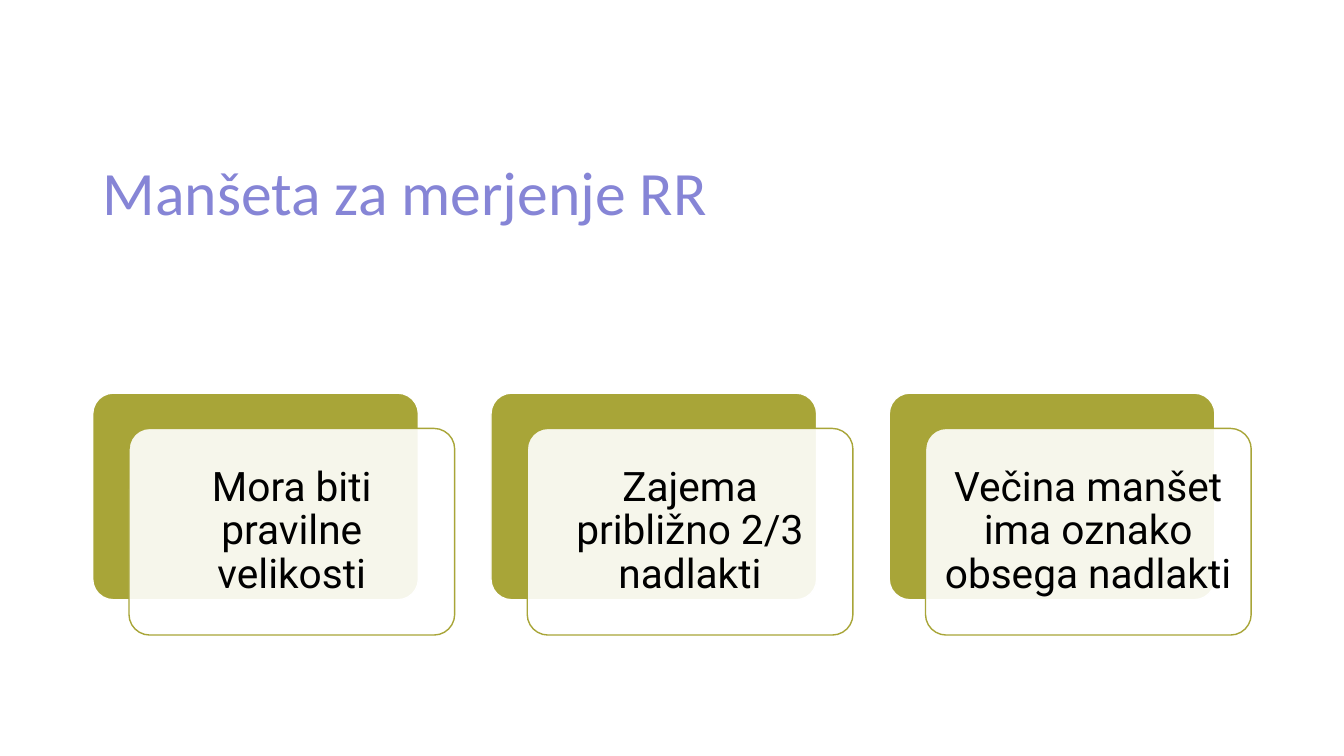
from lxml import etree
from pptx import Presentation
from pptx.dml.color import RGBColor
from pptx.enum.shapes import MSO_SHAPE as Shape
from pptx.enum.text import MSO_ANCHOR as Anchor, PP_ALIGN as Align
from pptx.oxml.ns import qn
from pptx.util import Inches, Pt

TITLE = "Manšeta za merjenje RR"
CARDS = [
    "Mora biti pravilne velikosti",
    "Zajema približno 2/3 nadlakti",
    "Večina manšet ima oznako obsega nadlakti",
]
OLIVE, WHITE, BLACK, LILAC = "A8A538", "FFFFFF", "000000", "8685D6"
LEFT, TOP, WIDTH, HEIGHT = 0.92, 3.9, 3.23, 2.05
PITCH, SHIFT, INSET = 3.95, (0.36, 0.35), 0.12
TITLE_FONT = {"name": "Calibri", "size": Pt(44)}
CARD_FONT = {"name": "Roboto", "size": Pt(29)}


def paint(color_format, value):
    color_format.rgb = RGBColor.from_string(value)


def write(shape, text, font, color, align):
    frame = shape.text_frame
    frame.word_wrap = True
    frame.vertical_anchor = Anchor.MIDDLE
    para = frame.paragraphs[0]
    para.alignment = align
    para.line_spacing = 0.9
    span = para.add_run()
    span.text = text
    for key, value in font.items():
        setattr(span.font, key, value)
    paint(span.font.color, color)


def add_panel(page, left, top, fill, line):
    panel = page.shapes.add_shape(
        Shape.ROUNDED_RECTANGLE, Inches(left), Inches(top), Inches(WIDTH), Inches(HEIGHT)
    )
    panel.adjustments[0] = 0.1
    panel.shadow.inherit = False
    panel.fill.solid()
    paint(panel.fill.fore_color, fill)
    paint(panel.line.color, line)
    panel.line.width = Pt(1)
    return panel


def set_opacity(shape, percent):
    color = shape.fill._xPr.find(qn("a:solidFill"))[0]
    etree.SubElement(color, qn("a:alpha")).set("val", str(percent * 1000))


def add_card(page, left, text):
    add_panel(page, left, TOP, OLIVE, WHITE)
    front = add_panel(page, left + SHIFT[0], TOP + SHIFT[1], WHITE, OLIVE)
    set_opacity(front, 90)
    for side in ("left", "top", "right", "bottom"):
        setattr(front.text_frame, f"margin_{side}", Inches(INSET))
    write(front, text, CARD_FONT, BLACK, Align.CENTER)


def main():
    deck = Presentation()
    deck.slide_width, deck.slide_height = Inches(13.33), Inches(7.5)
    page = deck.slides.add_slide(deck.slide_layouts[6])
    page.background.fill.solid()
    paint(page.background.fill.fore_color, WHITE)
    box = page.shapes.add_textbox(Inches(LEFT), Inches(0.67), Inches(11.5), Inches(2.54))
    write(box, TITLE, TITLE_FONT, LILAC, Align.LEFT)
    for index, text in enumerate(CARDS):
        add_card(page, LEFT + index * PITCH, text)
    deck.save("out.pptx")


if __name__ == "__main__":
    main()
